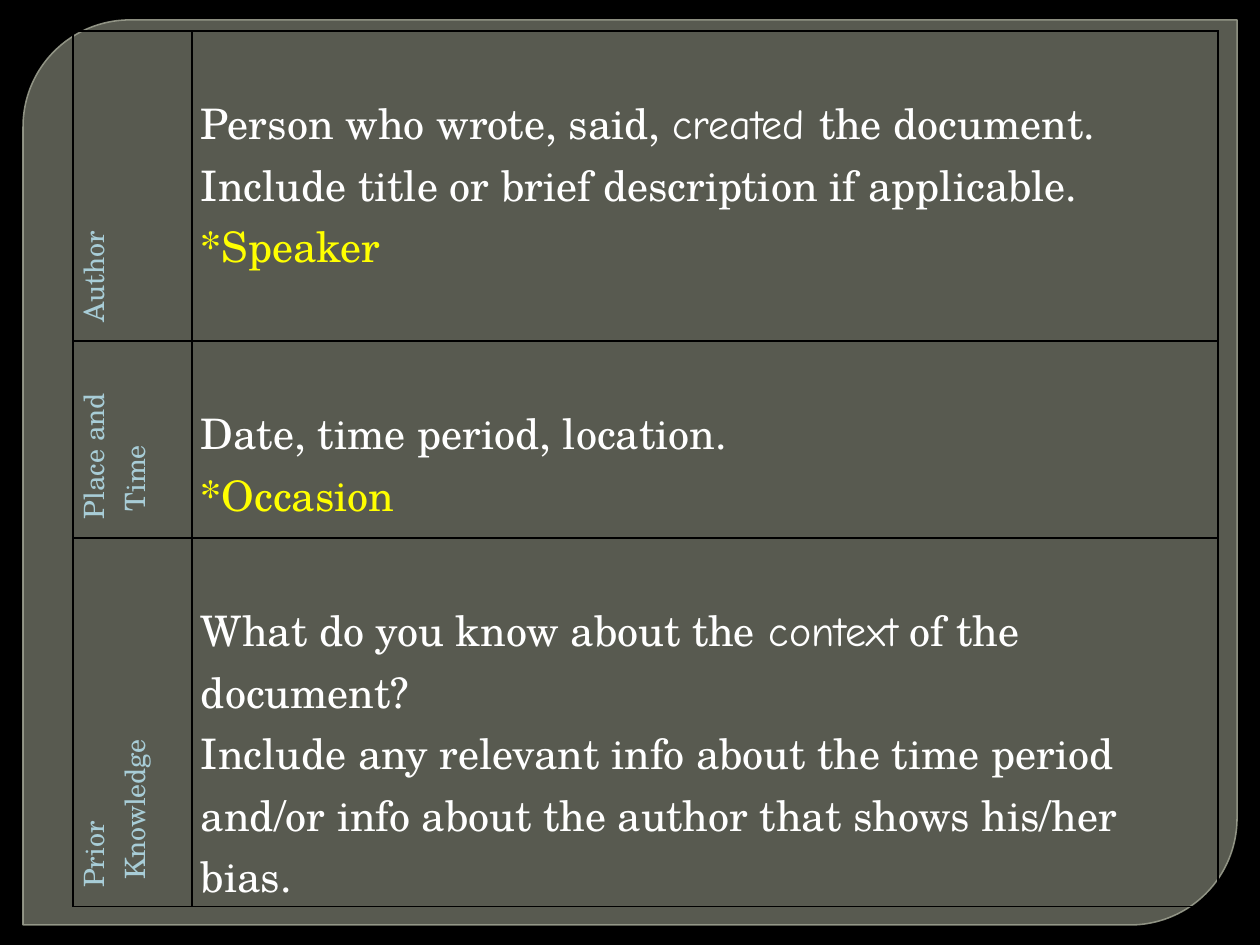
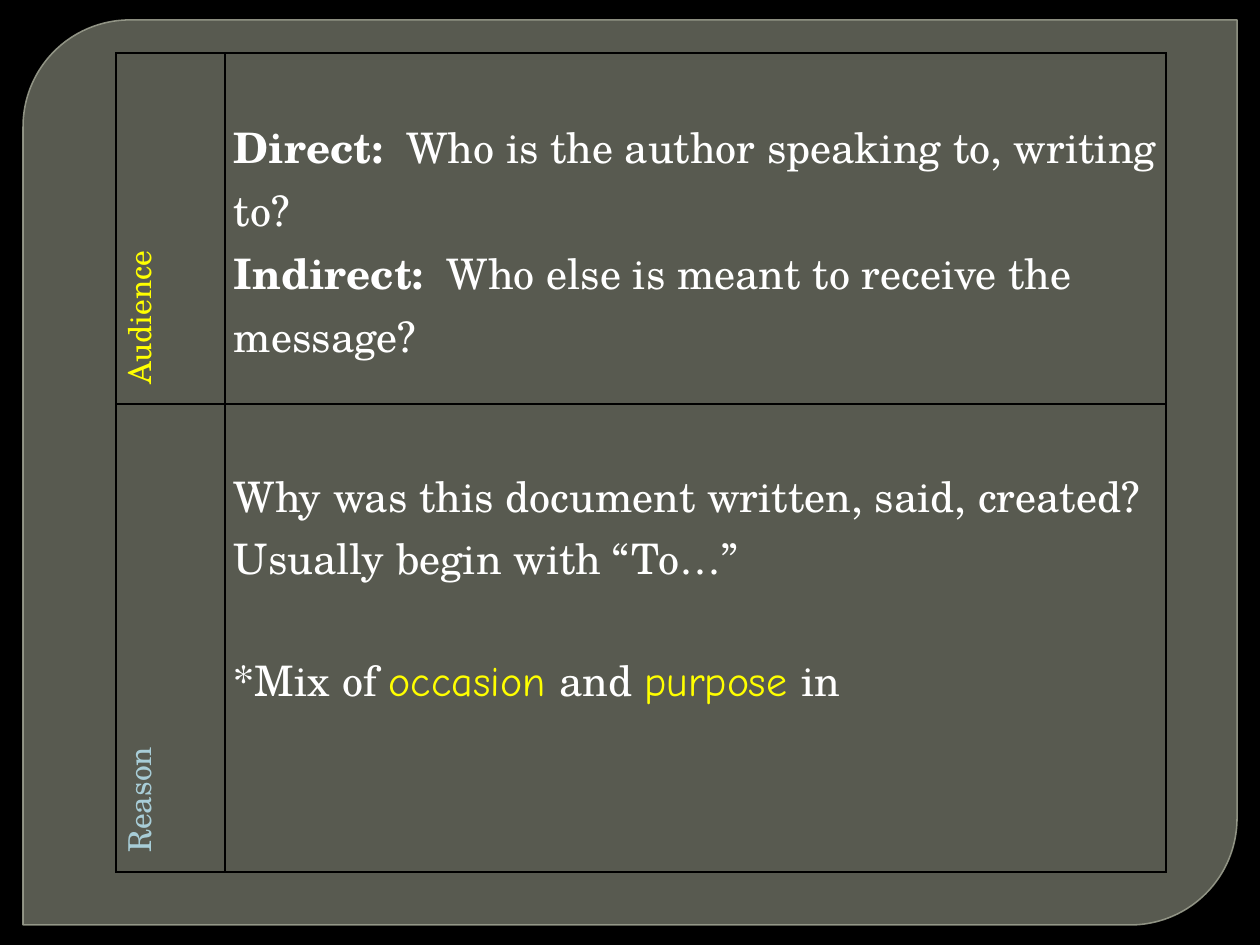
from dataclasses import dataclass

from lxml import etree
from pptx import Presentation
from pptx.dml.color import RGBColor
from pptx.enum.shapes import MSO_SHAPE
from pptx.oxml.ns import qn
from pptx.util import Pt

# Scale: 126 px to the inch
EMU_PER_INCH = 914400
PX_PER_INCH = 126

# Shared look
BLACK = RGBColor(0x00, 0x00, 0x00)
WHITE = RGBColor(0xFF, 0xFF, 0xFF)
YELLOW = RGBColor(0xFF, 0xFF, 0x00)
PALE_BLUE = RGBColor(0xA8, 0xCD, 0xD7)
PANEL_FILL = RGBColor(0x88, 0x8B, 0x7B)
PANEL_LINE = RGBColor(0x9D, 0xA0, 0x90)
SERIF = "TeX Gyre Schola"
HANDWRITTEN = "Comic Neue"
PANEL_SHAPE = MSO_SHAPE.ROUND_2_DIAG_RECTANGLE

BODY_SIZE = 24
BODY_LINE = 61
SIDE_MARGIN = 9
LABEL_INDENT = 10
BORDER_WIDTH = Pt(1)


@dataclass(frozen=True)
class Span:
    text: str
    color: RGBColor = WHITE
    font: str = SERIF
    bold: bool = False


@dataclass(frozen=True)
class Line:
    spans: tuple[Span, ...]
    gap_before: int = 0


@dataclass(frozen=True)
class Row:
    height: int
    label: tuple[str, ...]
    lines: tuple[Line, ...]
    label_color: RGBColor = PALE_BLUE


@dataclass(frozen=True)
class Sheet:
    left: int
    top: int
    label_width: int
    body_width: int
    label_size: int
    rows: tuple[Row, ...]


def line(*spans: Span, gap_before: int = 0) -> Line:
    return Line(spans, gap_before)


SHEETS = (
    Sheet(73, 31, 119, 1026, 16, (
        Row(310, ("Author",), (
            line(
                Span("Person who wrote, said, "),
                Span("created ", font=HANDWRITTEN),
                Span("the document.  Include title or brief description if applicable."),
            ),
            line(Span("*Speaker", YELLOW)),
        )),
        Row(197, ("Place and", " Time"), (
            line(Span("Date, time period, location.")),
            line(Span("*Occasion", YELLOW)),
        )),
        Row(343, ("Prior", " Knowledge"), (
            line(
                Span("What do you know about the"),
                Span(" context", font=HANDWRITTEN),
                Span(" of the document?"),
            ),
            line(Span("Include any relevant info about the time period and/or "
                      "info about the author that shows his/her bias.")),
        )),
    )),
    Sheet(116, 53, 109, 941, 18, (
        Row(351, ("Audience",), (
            line(Span("Direct:", bold=True),
                 Span("  Who is the author speaking to, writing to?")),
            line(Span("Indirect:", bold=True),
                 Span("  Who else is meant to receive the message?")),
        ), YELLOW),
        Row(468, ("Reason",), (
            line(Span("Why was this document written, said, created?")),
            line(Span("Usually begin with “To…”")),
            line(
                Span("*Mix of "),
                Span("occasion ", YELLOW, HANDWRITTEN),
                Span("and "),
                Span("purpose ", YELLOW, HANDWRITTEN),
                Span("in"),
                gap_before=BODY_LINE,
            ),
        )),
    )),
)


def px(length: int) -> int:
    return round(length * EMU_PER_INCH / PX_PER_INCH)


def set_opacity(color_parent, percent: int) -> None:
    color = color_parent.find(f".//{qn('a:srgbClr')}")
    etree.SubElement(color, qn("a:alpha")).set("val", str(percent * 1000))


def add_panel(slide) -> None:
    panel = slide.shapes.add_shape(PANEL_SHAPE, px(23), px(20), px(1214), px(905))
    panel.shadow.inherit = False
    panel.adjustments[0] = 0.118
    panel.adjustments[1] = 0
    panel.fill.solid()
    panel.fill.fore_color.rgb = PANEL_FILL
    panel.line.color.rgb = PANEL_LINE
    panel.line.width = Pt(0.87)
    properties = panel.element.spPr
    set_opacity(properties.find(qn("a:solidFill")), 65)
    set_opacity(properties.find(qn("a:ln")), 88)


def add_borders(cell) -> None:
    properties = cell._tc.get_or_add_tcPr()
    for position, side in enumerate(("lnL", "lnR", "lnT", "lnB")):
        border = etree.Element(qn(f"a:{side}"), w=str(BORDER_WIDTH))
        fill = etree.SubElement(border, qn("a:solidFill"))
        etree.SubElement(fill, qn("a:srgbClr")).set("val", str(BLACK))
        properties.insert(position, border)


def write_lines(cell, lines: tuple[Line, ...], size: int, indent: int = 0) -> None:
    frame = cell.text_frame
    for index, text_line in enumerate(lines):
        paragraph = frame.add_paragraph() if index else frame.paragraphs[0]
        if indent:
            paragraph._p.get_or_add_pPr().set("marL", str(px(indent)))
        if text_line.gap_before:
            paragraph.space_before = px(text_line.gap_before)
        for span in text_line.spans:
            run = paragraph.add_run()
            run.text = span.text
            run.font.name = span.font
            run.font.size = Pt(size)
            run.font.bold = span.bold
            run.font.color.rgb = span.color


def style_cell(cell, top_margin: int = 0) -> None:
    cell.fill.background()
    cell.margin_left = cell.margin_right = px(SIDE_MARGIN)
    cell.margin_top = px(top_margin)
    cell.margin_bottom = 0
    add_borders(cell)


def add_sheet(slide, sheet: Sheet) -> None:
    width = sheet.label_width + sheet.body_width
    height = sum(row.height for row in sheet.rows)
    table = slide.shapes.add_table(
        len(sheet.rows), 2, px(sheet.left), px(sheet.top), px(width), px(height)
    ).table
    table.first_row = False
    table.horz_banding = False
    table.columns[0].width = px(sheet.label_width)
    table.columns[1].width = px(sheet.body_width)

    for index, row in enumerate(sheet.rows):
        table.rows[index].height = px(row.height)
        label_cell, body_cell = table.cell(index, 0), table.cell(index, 1)

        # Label reads upwards
        style_cell(label_cell)
        label_cell._tc.get_or_add_tcPr().set("vert", "vert270")
        label_lines = tuple(line(Span(text, row.label_color)) for text in row.label)
        write_lines(label_cell, label_lines, sheet.label_size, LABEL_INDENT)

        # Body starts one line down
        style_cell(body_cell, BODY_LINE)
        write_lines(body_cell, row.lines, BODY_SIZE)


def main() -> None:
    presentation = Presentation()
    presentation.slide_width = px(1260)
    presentation.slide_height = px(945)
    blank_layout = presentation.slide_layouts[6]
    for sheet in SHEETS:
        slide = presentation.slides.add_slide(blank_layout)
        slide.background.fill.solid()
        slide.background.fill.fore_color.rgb = BLACK
        add_panel(slide)
        add_sheet(slide, sheet)
    presentation.save("out.pptx")


if __name__ == "__main__":
    main()
